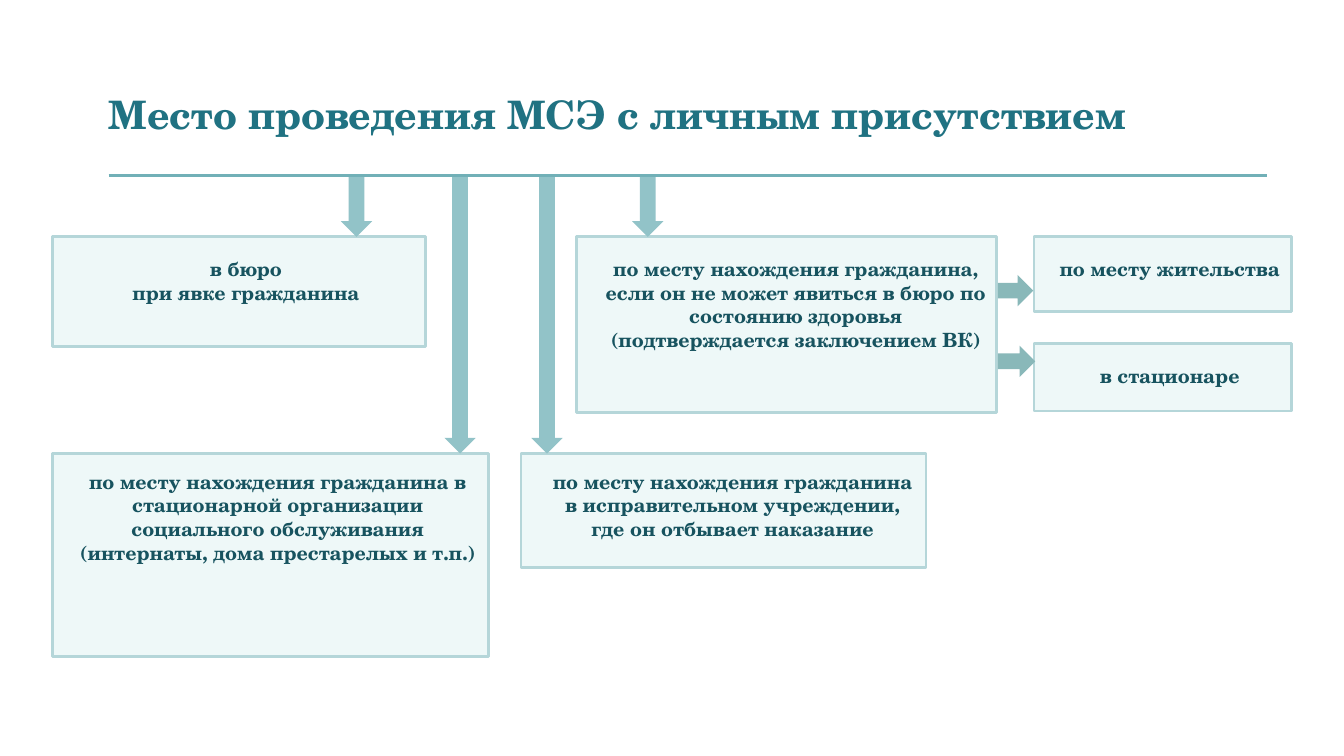
import pptx
import pptx.dml.color
import pptx.enum.shapes
import pptx.enum.text
import pptx.oxml.ns
import pptx.util
from lxml import etree

Cm = pptx.util.Cm
Pt = pptx.util.Pt
RGBColor = pptx.dml.color.RGBColor
MSO_SHAPE = pptx.enum.shapes.MSO_SHAPE
PP_ALIGN = pptx.enum.text.PP_ALIGN
MSO_ANCHOR = pptx.enum.text.MSO_ANCHOR

TITLE_TEAL = RGBColor(0x20, 0x72, 0x82)
TEXT_TEAL = RGBColor(0x17, 0x53, 0x5F)
RULE_TEAL = RGBColor(0x71, 0xB0, 0xB7)
DOWN_TEAL = RGBColor(0x92, 0xC3, 0xC8)
RIGHT_TEAL = RGBColor(0x89, 0xB8, 0xB9)
BOX_FILL = RGBColor(0xEE, 0xF8, 0xF8)
BOX_BORDER = RGBColor(0xB5, 0xD6, 0xD9)
FONT = "TeX Gyre Schola"

RULE_Y = 4.42
UPPER_ROW, LOWER_ROW = 5.97, 11.43
LEFT_EDGE, SIDE_COLUMN = 1.32, 26.06
ARROW_THICKNESS = 0.79


def set_font(paragraph, size, color):
    paragraph.font.name = FONT
    paragraph.font.size = Pt(size)
    paragraph.font.bold = True
    paragraph.font.color.rgb = color


def add_filled(kind, left, top, width, height, color):
    shape = slide.shapes.add_shape(kind, Cm(left), Cm(top), Cm(width), Cm(height))
    shape.shadow.inherit = False
    shape.fill.solid()
    shape.fill.fore_color.rgb = color
    shape.line.fill.background()
    return shape


presentation = pptx.Presentation()
presentation.slide_width = Cm(33.87)
presentation.slide_height = Cm(19.05)
slide = presentation.slides.add_slide(presentation.slide_layouts[5])

# Title
title = slide.shapes.title
title.left, title.top, title.width, title.height = Cm(2.74), Cm(2.54), Cm(30.6), Cm(1.04)
heading = title.text_frame
heading.text = "Место проведения МСЭ с личным присутствием"
heading.auto_size = pptx.enum.text.MSO_AUTO_SIZE.NONE
heading.vertical_anchor = MSO_ANCHOR.BOTTOM
heading.margin_left = 0
heading.paragraphs[0].alignment = PP_ALIGN.LEFT
heading.paragraphs[0].line_spacing = Pt(28)
set_font(heading.paragraphs[0], 28, TITLE_TEAL)

# Places: left, top, width, height, left inset, top inset, paragraphs
places = [
    (LEFT_EDGE, LOWER_ROW, 11, 5.11, 0.61, 0.41,
     ["по месту нахождения гражданина в стационарной организации социального обслуживания",
      "(интернаты, дома престарелых и т.п.)"]),
    (LEFT_EDGE, UPPER_ROW, 9.4, 2.77, 0.61, 0.51,
     ["в бюро", "при явке гражданина"]),
    (14.53, UPPER_ROW, 10.59, 4.42, 0.71, 0.51,
     ["по месту нахождения гражданина,",
      "если он не может явиться в бюро по состоянию здоровья "
      "(подтверждается заключением ВК)"]),
    (13.13, LOWER_ROW, 10.21, 2.87, 0.71, 0.41,
     ["по месту нахождения гражданина в исправительном учреждении,",
      "где он отбывает наказание"]),
    (SIDE_COLUMN, UPPER_ROW, 6.48, 1.88, 0.61, 0.51, ["по месту жительства"]),
    (SIDE_COLUMN, 8.66, 6.48, 1.7, 0.61, 0.51, ["в стационаре"]),
]
for left, top, width, height, inset_left, inset_top, lines in places:
    place = add_filled(MSO_SHAPE.RECTANGLE, left, top, width, height, BOX_FILL)
    place.line.color.rgb = BOX_BORDER
    place.line.width = Pt(2)
    frame = place.text_frame
    frame.word_wrap = True
    frame.vertical_anchor = MSO_ANCHOR.TOP
    frame.margin_left, frame.margin_top = Cm(inset_left), Cm(inset_top)
    frame.text = "\n".join(lines)
    for paragraph in frame.paragraphs:
        paragraph.alignment = PP_ALIGN.CENTER
        set_font(paragraph, 14, TEXT_TEAL)

# Arrows from the rule down to the places
for left, target in [(8.59, UPPER_ROW), (11.2, LOWER_ROW),
                     (13.39, LOWER_ROW), (15.93, UPPER_ROW)]:
    add_filled(MSO_SHAPE.DOWN_ARROW, left, RULE_Y, ARROW_THICKNESS,
               target - RULE_Y, DOWN_TEAL)

# Arrows to the two side places
for top, length in [(6.93, 0.89), (8.71, 0.94)]:
    add_filled(MSO_SHAPE.RIGHT_ARROW, 25.15, top, length, ARROW_THICKNESS, RIGHT_TEAL)

# Rule under the title
rule = slide.shapes.add_connector(pptx.enum.shapes.MSO_CONNECTOR.STRAIGHT,
                                  Cm(2.74), Cm(RULE_Y), Cm(31.93), Cm(RULE_Y))
rule.line.color.rgb = RULE_TEAL
rule.line.width = Pt(2.25)
etree.SubElement(rule._element.spPr, pptx.oxml.ns.qn("a:effectLst"))

presentation.save("out.pptx")
